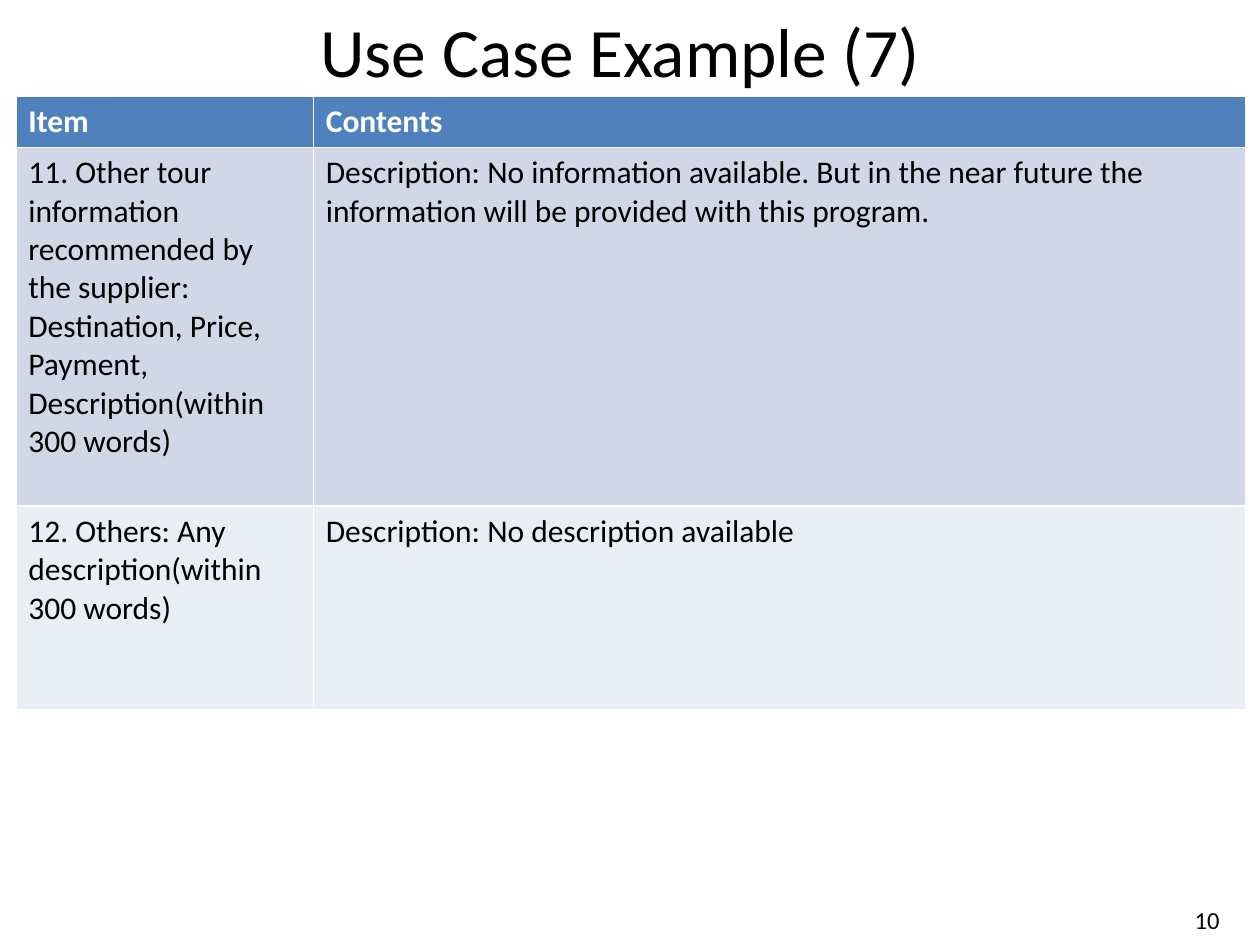
from pptx import Presentation
from pptx.dml.color import RGBColor
from pptx.enum import text
from pptx.util import Pt

TITLE = "Use Case Example (7)"
PAGE = "10"
ROWS = [
    ("Item", "Contents"),
    ("11. Other tour information recommended by the supplier: "
     "Destination, Price, Payment, Description(within 300 words)",
     "Description: No information available. But in the near future "
     "the information will be provided with this program."),
    ("12. Others: Any description(within 300 words)",
     "Description: No description available"),
]
WIDTHS = [170, 533]
HEIGHTS = [29, 205, 116.5]
HUES = {"ink": "000000", "white": "FFFFFF", "head": "4F81BD",
        "odd": "D0D8E8", "even": "E9EDF4"}
FILLS = ["head", "odd", "even"]


def hue(name):
    return RGBColor.from_string(HUES[name])


def write(frame, words, size, ink="ink", bold=False, align=None):
    frame.text = words
    para = frame.paragraphs[0]
    para.alignment = align
    font = para.runs[0].font
    font.name, font.size, font.bold = "Calibri", Pt(size), bold
    font.color.rgb = hue(ink)


def place(shape, left, top, width, height):
    shape.left, shape.top = Pt(left), Pt(top)
    shape.width, shape.height = Pt(width), Pt(height)
    frame = shape.text_frame
    frame.word_wrap = True
    frame.auto_size = text.MSO_AUTO_SIZE.NONE
    frame.vertical_anchor = text.MSO_ANCHOR.MIDDLE
    return frame


def main():
    deck = Presentation()
    deck.slide_width, deck.slide_height = Pt(720), Pt(540)
    slide = deck.slides.add_slide(deck.slide_layouts[5])

    frame = place(slide.shapes.title, 31, 3.6, 647, 50)
    write(frame, TITLE, 39.6, align=text.PP_ALIGN.CENTER)

    table = slide.shapes.add_table(
        len(ROWS), len(WIDTHS), Pt(9), Pt(55),
        Pt(sum(WIDTHS)), Pt(sum(HEIGHTS))).table
    for col, width in zip(table.columns, WIDTHS):
        col.width = Pt(width)
    for r, (row, height) in enumerate(zip(ROWS, HEIGHTS)):
        table.rows[r].height = Pt(height)
        for c, words in enumerate(row):
            cell = table.cell(r, c)
            cell.fill.solid()
            cell.fill.fore_color.rgb = hue(FILLS[r])
            write(cell.text_frame, words, 18,
                  "ink" if r else "white", bold=r == 0)

    box = slide.shapes.add_textbox(0, 0, 0, 0)
    frame = place(box, 536, 511, 168, 29)
    write(frame, PAGE, 14, align=text.PP_ALIGN.RIGHT)
    deck.save("out.pptx")


if __name__ == "__main__":
    main()
